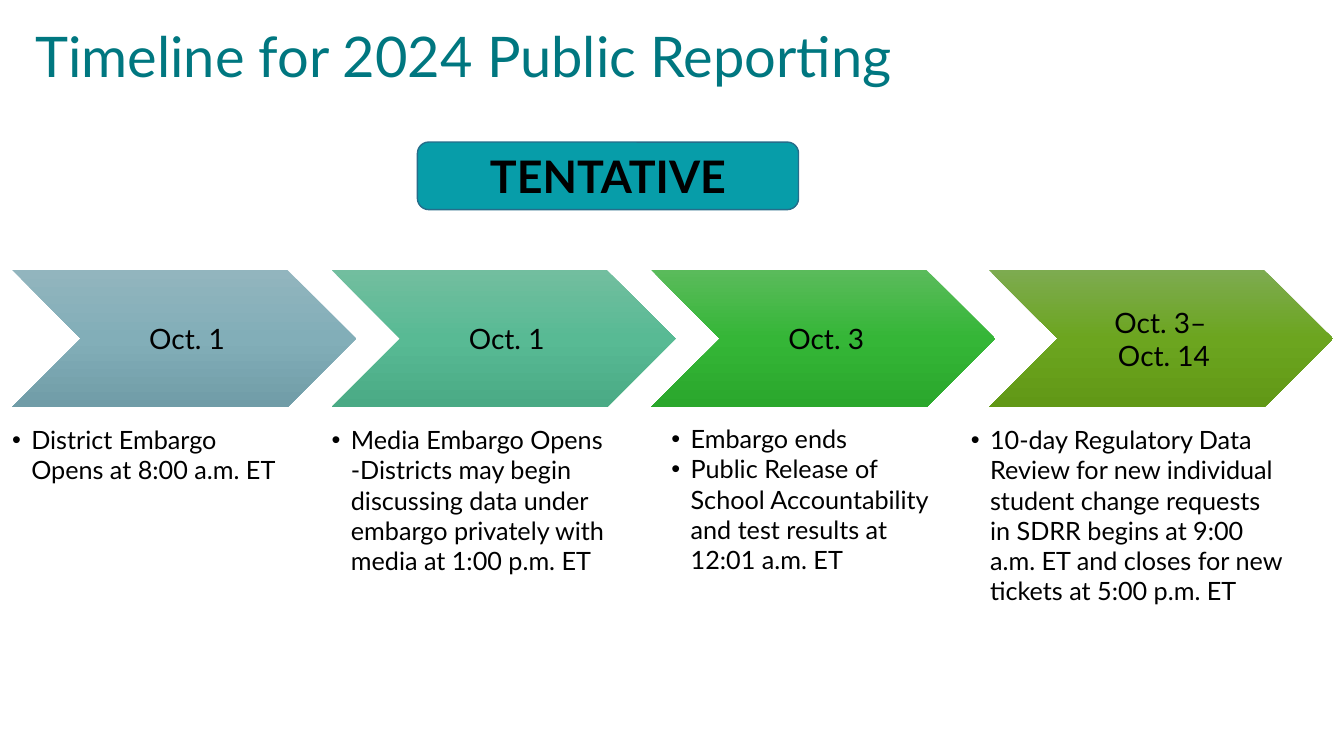
from copy import deepcopy

from lxml import etree
from pptx import Presentation
from pptx.dml.color import RGBColor
from pptx.enum import shapes, text
from pptx.oxml import ns
from pptx.util import Inches, Pt

BLACK = RGBColor(0x00, 0x00, 0x00)
TEAL_TEXT = RGBColor(0x00, 0x77, 0x80)
TEAL_FILL = RGBColor(0x07, 0x9D, 0xA9)
TEAL_LINE = RGBColor(0x26, 0x6D, 0x8A)
BLUE_SHADES = [RGBColor(0x92, 0xB5, 0xBE), RGBColor(0x82, 0xAE, 0xB8), RGBColor(0x70, 0x9C, 0xA7)]
MINT_SHADES = [RGBColor(0x72, 0xBE, 0x9F), RGBColor(0x58, 0xBA, 0x94), RGBColor(0x4A, 0xAA, 0x85)]
GREEN_SHADES = [RGBColor(0x5A, 0xBB, 0x5B), RGBColor(0x35, 0xB6, 0x37), RGBColor(0x2A, 0xA7, 0x2C)]
OLIVE_SHADES = [RGBColor(0x7D, 0xAB, 0x50), RGBColor(0x6C, 0xA5, 0x1F), RGBColor(0x61, 0x98, 0x16)]

# Each stage: chevron left, date, shades, list position (left, top, width), list
STAGES = [
    (0.12, "Oct. 1", BLUE_SHADES, (0.12, 4.21, 2.72),
     ["District Embargo Opens at 8:00 a.m. ET"]),
    (3.29, "Oct. 1", MINT_SHADES, (3.29, 4.21, 2.72),
     ["Media Embargo Opens -Districts may begin discussing data under "
      "embargo privately with media at 1:00 p.m. ET"]),
    (6.46, "Oct. 3", GREEN_SHADES, (6.66, 4.2, 2.57),
     ["Embargo ends",
      "Public Release of School Accountability and test results at 12:01 a.m. ET"]),
    (9.81, "Oct. 3– \nOct. 14", OLIVE_SHADES, (9.63, 4.21, 3.09),
     ["10-day Regulatory Data Review for new individual student change requests "
      "in SDRR begins at 9:00 a.m. ET and closes for new tickets at 5:00 p.m. ET"]),
]


class TimelinePage:
    font = "Lato"

    def __init__(self, page):
        self.page = page

    def place(self, box, left, top, width, height):
        box.left, box.top = Inches(left), Inches(top)
        box.width, box.height = Inches(width), Inches(height)

    def fill_text(self, box, words, size, color, align, anchor, bold=False, spacing=1.0):
        frame = box.text_frame
        frame.text = words
        frame.word_wrap = True
        frame.auto_size = text.MSO_AUTO_SIZE.NONE
        frame.vertical_anchor = anchor
        for para in frame.paragraphs:
            para.alignment = align
            para.line_spacing = spacing
            para.space_before = Pt(0)
            for span in para.runs:
                span.font.name = self.font
                span.font.size = Pt(size)
                span.font.bold = bold
                span.font.color.rgb = color
        return frame

    def set_insets(self, frame, left, others):
        frame.margin_left = Inches(left)
        frame.margin_top = frame.margin_right = frame.margin_bottom = Inches(others)

    def indent(self, para, margin, first):
        props = para._p.get_or_add_pPr()
        props.set("marL", str(Inches(margin)))
        props.set("indent", str(Inches(first)))
        return props

    def title(self, words):
        box = self.page.shapes.title
        self.place(box, 0, 0, 12.24, 1.18)
        frame = self.fill_text(box, words, 40, TEAL_TEXT, text.PP_ALIGN.LEFT,
                               text.MSO_ANCHOR.MIDDLE, spacing=0.9)
        self.indent(frame.paragraphs[0], 0.25, 0)

    def shape(self, kind, left, top, width, height):
        box = self.page.shapes.add_shape(kind, Inches(left), Inches(top),
                                         Inches(width), Inches(height))
        box.shadow.inherit = False
        return box

    def badge(self, words):
        box = self.shape(shapes.MSO_SHAPE.ROUNDED_RECTANGLE, 4.14, 1.41, 3.78, 0.67)
        box.fill.solid()
        box.fill.fore_color.rgb = TEAL_FILL
        box.line.color.rgb = TEAL_LINE
        box.line.width = Pt(1)
        self.fill_text(box, words, 32, BLACK, text.PP_ALIGN.CENTER,
                       text.MSO_ANCHOR.MIDDLE, bold=True)

    def chevron(self, left, date, shades):
        box = self.shape(shapes.MSO_SHAPE.CHEVRON, left, 2.68, 3.41, 1.36)
        box.line.fill.background()
        box.fill.gradient()
        box.fill.gradient_angle = 270
        # A third stop halfway down
        stops = box._element.spPr.find(".//" + ns.qn("a:gsLst"))
        stops.insert(1, deepcopy(stops[0]))
        for stop, position, shade in zip(box.fill.gradient_stops, (0, 0.5, 1), shades):
            stop.position = position
            stop.color.rgb = shade
        frame = self.fill_text(box, date, 20, BLACK, text.PP_ALIGN.CENTER,
                               text.MSO_ANCHOR.MIDDLE)
        self.set_insets(frame, 0.09, 0.03)

    def bullets(self, box, position, items):
        self.place(box, *position, 1.7)
        frame = self.fill_text(box, "\n".join(items), 18, BLACK, text.PP_ALIGN.LEFT,
                               text.MSO_ANCHOR.TOP)
        self.set_insets(frame, 0, 0)
        for para in frame.paragraphs:
            props = self.indent(para, 0.19, -0.19)
            etree.SubElement(props, ns.qn("a:buFont"), typeface="Arial")
            etree.SubElement(props, ns.qn("a:buChar"), char="•")


def main():
    deck = Presentation()
    deck.slide_width, deck.slide_height = Inches(13.33), Inches(7.5)
    # The Comparison layout has a title and four body placeholders
    page = deck.slides.add_slide(deck.slide_layouts[4])
    timeline = TimelinePage(page)

    # Heading
    timeline.title("Timeline for 2024 Public Reporting")
    timeline.badge("TENTATIVE")

    # Stages
    bodies = list(page.placeholders)[1:]
    for body, (left, date, shades, position, items) in zip(bodies, STAGES):
        timeline.chevron(left, date, shades)
        timeline.bullets(body, position, items)

    deck.save("out.pptx")


if __name__ == "__main__":
    main()
